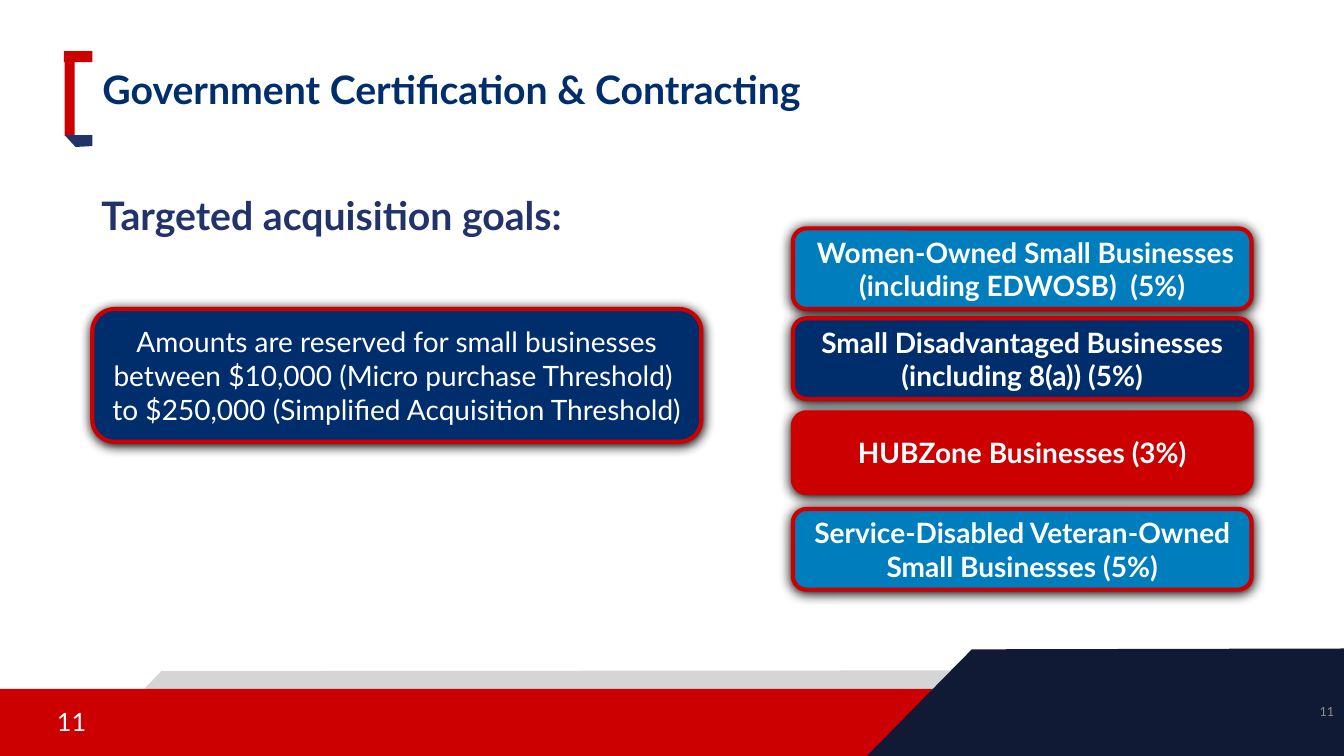
from dataclasses import dataclass

from lxml.etree import SubElement
from pptx import Presentation
from pptx.dml.color import RGBColor
from pptx.enum.shapes import MSO_SHAPE as Shape
from pptx.enum.text import MSO_ANCHOR as Anchor, PP_ALIGN as Align
from pptx.oxml.ns import qn
from pptx.util import Emu, Pt


@dataclass(frozen=True)
class Theme:
    font: str = "Lato"
    navy: str = "002E6D"
    indigo: str = "223369"
    midnight: str = "111A34"
    blue: str = "007DBC"
    red: str = "CC0000"
    silver: str = "D5D5D5"
    gray: str = "8D8D8E"
    white: str = "FFFFFF"
    black: str = "000000"
    heading: int = 28
    card: int = 20
    number: int = 18
    small: int = 9
    border: int = 3


class Page:
    columns, rows = 16, 9

    def __init__(self, deck, theme):
        self.theme = theme
        self.slide = deck.slides.add_slide(deck.slide_layouts[5])
        self.shapes = self.slide.shapes
        self.column = deck.slide_width / self.columns
        self.row = deck.slide_height / self.rows

    def place(self, left, top, width, height):
        return [Emu(round(size * unit)) for size, unit in zip(
            (left, top, width, height), (self.column, self.row) * 2)]

    def paint(self, shape, fill):
        shape.shadow.inherit = False
        shape.fill.solid()
        shape.fill.fore_color.rgb = RGBColor.from_string(fill)
        shape.line.fill.background()

    def add_words(self, shape, text, size, color, bold=False,
                  align=Align.LEFT, anchor=Anchor.TOP, spacing=None):
        frame = shape.text_frame
        frame.word_wrap = True
        frame.vertical_anchor = anchor
        para = frame.paragraphs[0]
        para.alignment = align
        para.line_spacing = spacing
        span = para.add_run()
        span.text = text
        span.font.name = self.theme.font
        span.font.size = Pt(size)
        span.font.bold = bold
        span.font.color.rgb = RGBColor.from_string(color)

    def title(self, text, area):
        holder = self.shapes.title
        holder.left, holder.top, holder.width, holder.height = self.place(*area)
        self.add_words(holder, text, self.theme.heading, self.theme.navy, True, spacing=0.9)

    def text(self, text, area, size, color, **style):
        box = self.shapes.add_textbox(*self.place(*area))
        self.add_words(box, text, size, color, **style)

    def bar(self, area, fill):
        self.paint(self.shapes.add_shape(Shape.RECTANGLE, *self.place(*area)), fill)

    def outline(self, points, fill):
        corners = [(round(x * self.column), round(y * self.row)) for x, y in points]
        builder = self.shapes.build_freeform(*corners[0])
        builder.add_line_segments(corners[1:], close=True)
        self.paint(builder.convert_to_shape(), fill)

    def card(self, text, area, fill, bold=True):
        card = self.shapes.add_shape(Shape.ROUNDED_RECTANGLE, *self.place(*area))
        self.paint(card, fill)
        card.line.color.rgb = RGBColor.from_string(self.theme.red)
        card.line.width = Pt(self.theme.border)
        self.cast_shadow(card)
        self.add_words(card, text, self.theme.card, self.theme.white, bold,
                       Align.CENTER, Anchor.MIDDLE)

    def cast_shadow(self, shape):
        effects = shape.element.spPr.find(qn("a:effectLst"))
        shadow = SubElement(effects, qn("a:outerShdw"), blurRad=str(Pt(8.5)),
                            dist=str(Pt(1)), dir="5400000", algn="t", rotWithShape="0")
        SubElement(shadow, qn("a:srgbClr"), val=self.theme.black)


def main():
    deck = Presentation()
    deck.slide_width, deck.slide_height = Emu(12192000), Emu(6858000)
    theme = Theme()
    page = Page(deck, theme)

    page.outline([(1.92, 7.99), (12.24, 7.98), (12.24, 8.57), (1.36, 8.57)], theme.silver)
    page.bar((0, 8.2, 16, 0.8), theme.red)
    page.outline([(11.57, 7.73), (16, 7.72), (16, 9), (10.32, 9)], theme.midnight)
    page.text("11", (0.56, 8.35, 3.6, 0.48), theme.number, theme.white)
    page.text("11", (13.3, 8.32, 2.7, 0.48), theme.small, theme.gray, align=Align.RIGHT)

    page.outline([(0.77, 0.7), (0.89, 0.7), (0.89, 1.63), (0.77, 1.61)], theme.red)
    page.bar((0.76, 0.61, 0.34, 0.13), theme.red)
    page.outline([(1.1, 1.61), (1.1, 1.74), (0.9, 1.75), (0.77, 1.61)], theme.indigo)

    page.title("Government Certification & Contracting", (1.1, 0.78, 13.8, 1.31))
    page.text("Targeted acquisition goals:", (1.09, 2.28, 14.29, 4.98),
              theme.heading, theme.indigo, bold=True, spacing=0.9)

    goals = [
        (" Women-Owned Small Businesses (including EDWOSB)  (5%)", 2.72, theme.blue),
        ("Small Disadvantaged Businesses (including 8(a)) (5%)", 3.79, theme.navy),
        ("HUBZone Businesses (3%)", 4.91, theme.red),
        ("Service-Disabled Veteran-Owned Small Businesses (5%)", 6.06, theme.blue),
    ]
    for goal, top, fill in goals:
        page.card(goal, (9.44, top, 5.46, 0.96), fill)
    page.card("Amounts are reserved for small businesses between $10,000 "
              "(Micro purchase Threshold)  to $250,000 (Simplified Acquisition Threshold)",
              (1.1, 3.68, 7.25, 1.58), theme.navy, bold=False)

    deck.save("out.pptx")


if __name__ == "__main__":
    main()
